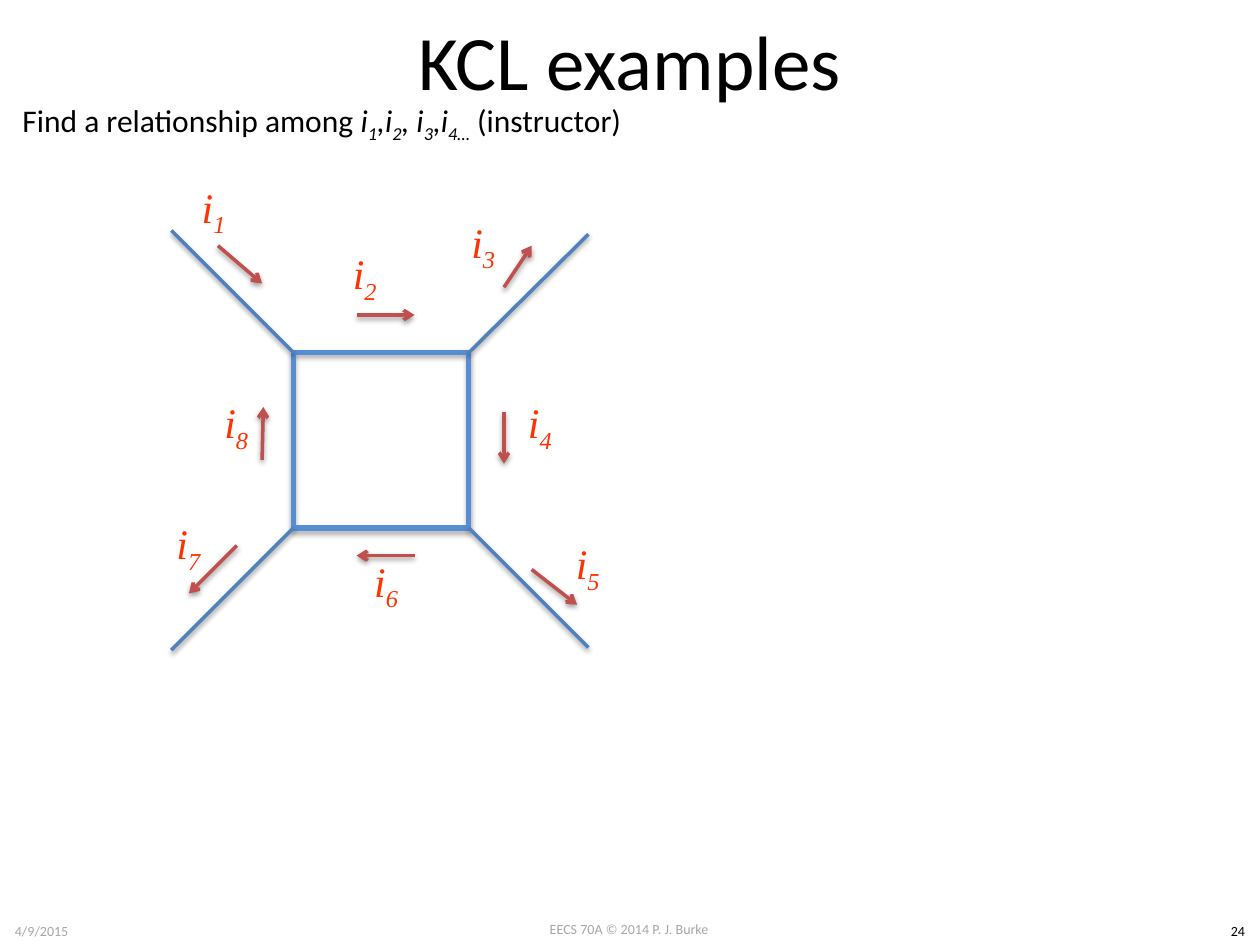
"""Build the KCL examples slide: a square node loop with eight labelled currents."""
from lxml import etree
from pptx import Presentation
from pptx.dml.color import RGBColor
from pptx.enum.shapes import MSO_CONNECTOR, MSO_SHAPE
from pptx.enum.text import MSO_ANCHOR as ANCHOR, PP_ALIGN as ALIGN
from pptx.oxml.ns import qn
from pptx.util import Inches, Pt

COLORS = {"black": "000000", "gray": "A6A6A6", "label": "FF3300",
          "arrow": "C0504D", "wire": "4F81BD", "square": "558ED5"}
TITLE = {"name": "Calibri", "size": Pt(44), "color": "black"}
BODY = {"name": "Calibri", "size": Pt(18), "color": "black"}
FOOTER = {"name": "Calibri", "size": Pt(8), "color": "gray"}
NUMBER = {**FOOTER, "color": "black"}
LABEL = {"name": "Times New Roman", "size": Pt(24), "color": "label"}

prs = Presentation()
prs.slide_width, prs.slide_height = Inches(10), Inches(7.5)
s = prs.slides.add_slide(prs.slide_layouts[6])


def add_text(box, runs, style, align=ALIGN.CENTER, anchor=ANCHOR.MIDDLE):
    tf = s.shapes.add_textbox(*map(Inches, box)).text_frame
    tf.word_wrap, tf.vertical_anchor = True, anchor
    p = tf.paragraphs[0]
    p.alignment = align
    for text, italic, subscript in runs:
        r = p.add_run()
        r.text = text
        for key, value in {**style, "italic": italic}.items():
            if key == "color":
                r.font.color.rgb = RGBColor.from_string(COLORS[value])
            else:
                setattr(r.font, key, value)
        if subscript:
            r._r.get_or_add_rPr().set("baseline", "-25000")


def style_line(sp, color, width, alpha, distance):
    sp.line.color.rgb = RGBColor.from_string(COLORS[color])
    sp.line.width = Pt(width)
    props = sp._element.spPr
    effects = props.find(qn("a:effectLst"))
    if effects is None:
        effects = etree.SubElement(props, qn("a:effectLst"))
    shadow = etree.SubElement(effects, qn("a:outerShdw"), blurRad=str(Pt(3.1)),
                              dist=str(Pt(distance)), dir="5400000", rotWithShape="0")
    tint = etree.SubElement(shadow, qn("a:srgbClr"), val=COLORS["black"])
    etree.SubElement(tint, qn("a:alpha"), val=str(alpha * 1000))


add_text((0.5, 0, 9, 0.95), [("KCL examples", False, False)], TITLE)
add_text((0.08, 0.75, 5.12, 0.4), [
    ("Find a relationship among ", False, False),
    ("i", True, False), ("1", True, True), (",i", True, False), ("2", True, True),
    (", i", True, False), ("3", True, True), (",i", True, False), ("4…", True, True),
    (" (instructor)", False, False)], BODY, ALIGN.LEFT, ANCHOR.TOP)

left, top, side = 2.33, 2.8, 1.39
right, bottom = left + side, top + side
sp = s.shapes.add_shape(MSO_SHAPE.RECTANGLE, *map(Inches, (left, top, side, side)))
sp.fill.background()
sp.shadow.inherit = False
style_line(sp, "square", 3, 35, 1.8)

wires = [(right, top, 4.67, 1.86), (left, top, 1.36, 1.83),
         (right, bottom, 4.67, 5.14), (left, bottom, 1.36, 5.16)]
arrows = [(1.73, 1.95, 2.08, 2.25), (2.83, 2.5, 3.29, 2.5),
          (4, 2.28, 4.22, 1.95), (4, 3.27, 4, 3.68),
          (4.22, 4.52, 4.58, 4.8), (3.29, 4.41, 2.83, 4.41),
          (1.88, 4.33, 1.5, 4.71), (2.08, 3.65, 2.09, 3.23)]
for color, lines in (("wire", wires), ("arrow", arrows)):
    for ends in lines:
        line = s.shapes.add_connector(MSO_CONNECTOR.STRAIGHT, *map(Inches, ends))
        style_line(line, color, 2, 38, 1.6)
        if color == "arrow":
            etree.SubElement(line.line._get_or_add_ln(), qn("a:tailEnd"), type="arrow")

labels = [(1.31, 1.36), (2.51, 1.89), (3.45, 1.64), (3.9, 3.07),
          (4.28, 4.19), (2.68, 4.33), (1.11, 4.03), (1.49, 3.07)]
for number, (x, y) in enumerate(labels, 1):
    add_text((x, y, 0.77, 0.61), [("i", True, False), (str(number), True, True)], LABEL)

add_text((0.02, 7.27, 2.07, 0.23), [("4/9/2015", False, False)], FOOTER, ALIGN.LEFT)
add_text((3.83, 7.26, 2.33, 0.24), [("EECS 70A © 2014 P. J. Burke", False, False)],
         FOOTER, anchor=ANCHOR.TOP)
add_text((9.65, 7.27, 0.35, 0.24), [("24", False, False)], NUMBER, anchor=ANCHOR.TOP)

prs.save("out.pptx")
